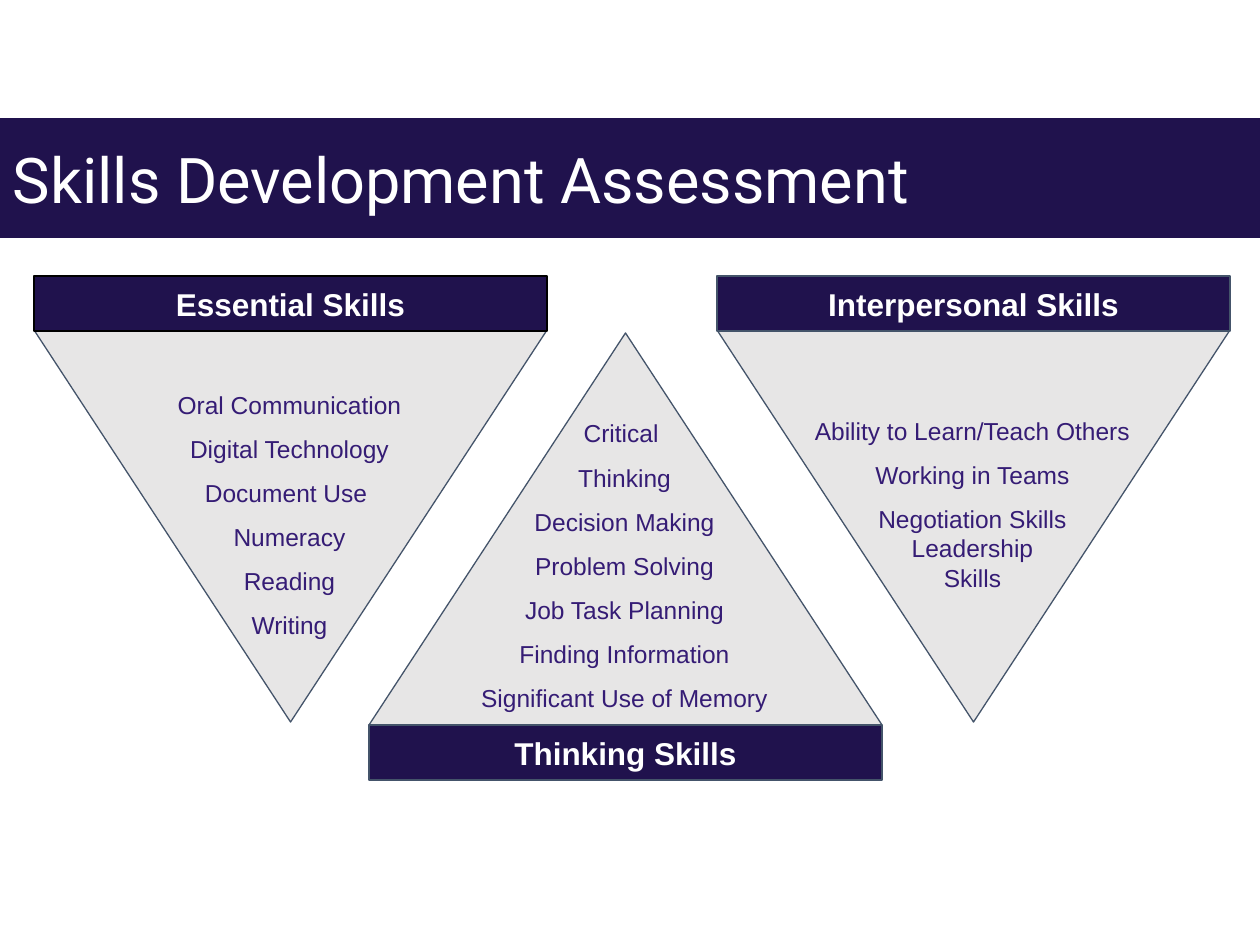
from pptx import Presentation
from pptx.dml.color import RGBColor
from pptx.enum.shapes import MSO_SHAPE
from pptx.enum.text import MSO_ANCHOR, PP_ALIGN
from pptx.util import Emu, Pt

RECT = MSO_SHAPE.RECTANGLE
TRIANGLE = MSO_SHAPE.FLOWCHART_EXTRACT
MIDDLE = MSO_ANCHOR.MIDDLE
LEFT, CENTER = PP_ALIGN.LEFT, PP_ALIGN.CENTER

PX = 914400 / 126
COLORS = {"navy": "20124D", "gray": "E7E6E6", "slate": "44546A",
          "black": "000000", "white": "FFFFFF", "violet": "351C75"}
FORMATS = {
    "title": {"name": "Roboto", "size": Pt(36), "bold": False},
    "header": {"name": "Arial", "size": Pt(18), "bold": True},
    "skill": {"name": "Arial", "size": Pt(14), "bold": False},
}


def add_box(kind, box, fill=None, line=None):
    sp = s.shapes.add_shape(kind, *[Emu(round(v * PX)) for v in box])
    sp.shadow.inherit = False
    if fill:
        sp.fill.solid()
        sp.fill.fore_color.rgb = RGBColor.from_string(COLORS[fill])
    else:
        sp.fill.background()
    if line:
        sp.line.color.rgb = RGBColor.from_string(COLORS[line])
        sp.line.width = Pt(0.75)
    else:
        sp.line.fill.background()
    return sp


def add_text(sp, lines, style, color, align=CENTER):
    tf = sp.text_frame
    margin = Emu(round(13 * PX))
    frame = {"word_wrap": True, "vertical_anchor": MIDDLE,
             "margin_left": margin, "margin_right": margin,
             "margin_top": margin, "margin_bottom": margin}
    for name, value in frame.items():
        setattr(tf, name, value)
    for i, (text, spacing) in enumerate(lines):
        p = tf.add_paragraph() if i else tf.paragraphs[0]
        p.alignment = align
        p.line_spacing = spacing
        r = p.add_run()
        r.text = text
        for name, value in FORMATS[style].items():
            setattr(r.font, name, value)
        r.font.color.rgb = RGBColor.from_string(COLORS[color])


prs = Presentation()
prs.slide_width = Emu(round(1260 * PX))
prs.slide_height = Emu(round(945 * PX))
s = prs.slides.add_slide(prs.slide_layouts[6])

title = add_box(RECT, (0, 118, 1260, 120), "navy")
add_text(title, [("Skills Development Assessment", 1.0)], "title", "white", LEFT)

WIDTH, TRIANGLE_H, HEADER_H = 513, 392, 55
LIST_W, LIST_H, LIST_INSET = 457, 333, 27

panels = [
    {"header": "Thinking Skills", "left": 369, "top": 333, "header_top": 725,
     "list_top": 399, "rotation": 0, "line": "slate",
     "skills": [("Critical ", 1.0), ("Thinking", 1.5), ("Decision Making", 1.5),
                ("Problem Solving", 1.5), ("Job Task Planning", 1.5),
                ("Finding Information", 1.5),
                ("Significant Use of Memory", 1.5)]},
    {"header": "Essential Skills", "left": 34, "top": 330, "header_top": 276,
     "list_top": 341, "rotation": 180, "line": "black",
     "skills": [("Oral Communication", 1.5), ("Digital Technology", 1.5),
                ("Document Use ", 1.5), ("Numeracy", 1.5), ("Reading", 1.5),
                ("Writing", 1.5)]},
    {"header": "Interpersonal Skills", "left": 717, "top": 330, "header_top": 276,
     "list_top": 330, "rotation": 180, "line": "slate",
     "skills": [("Ability to Learn/Teach Others", 1.5), ("Working in Teams", 1.5),
                ("Negotiation Skills", 1.5), ("Leadership", 1.0),
                ("Skills", 1.0)]},
]

for panel in panels:
    left = panel["left"]
    triangle = add_box(TRIANGLE, (left, panel["top"], WIDTH, TRIANGLE_H), "gray", "slate")
    triangle.rotation = panel["rotation"]
    skills = add_box(RECT, (left + LIST_INSET, panel["list_top"], LIST_W, LIST_H))
    add_text(skills, panel["skills"], "skill", "violet")
    header = add_box(RECT, (left, panel["header_top"], WIDTH, HEADER_H), "navy", panel["line"])
    add_text(header, [(panel["header"], 1.0)], "header", "white")

prs.save("out.pptx")
